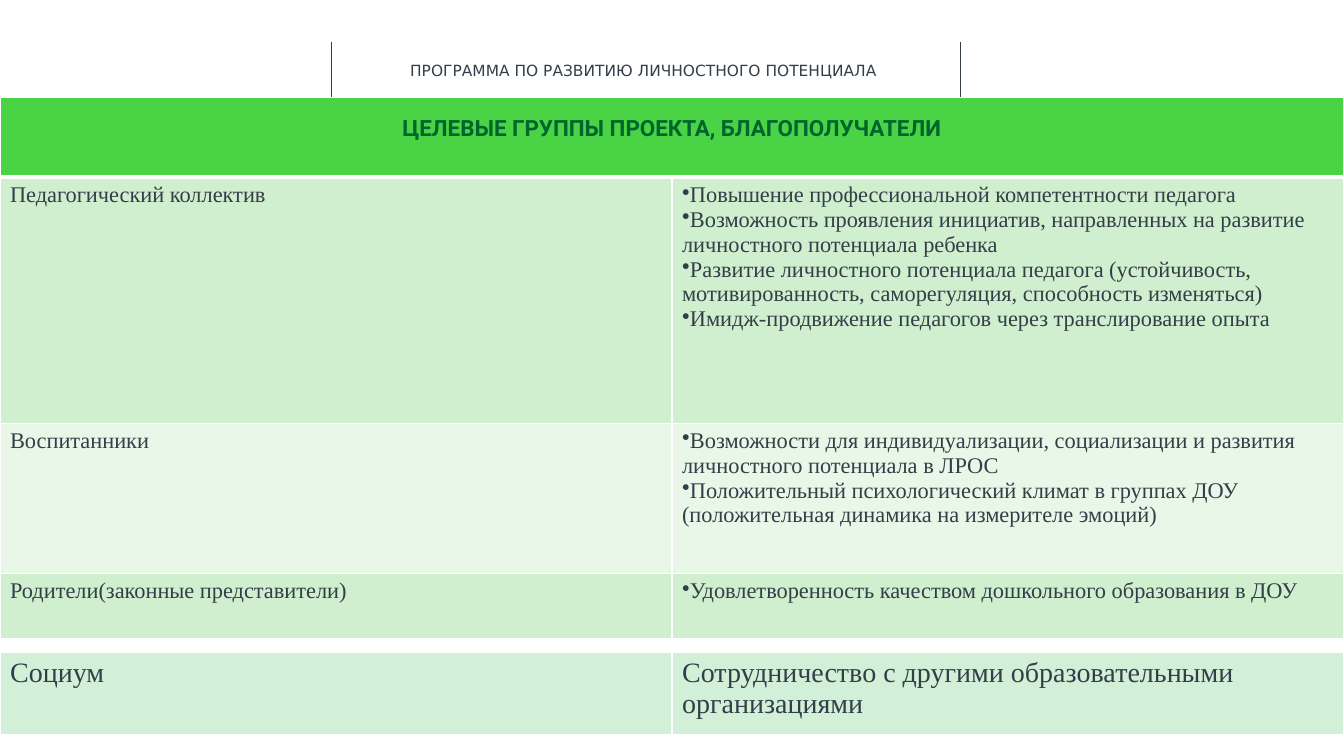
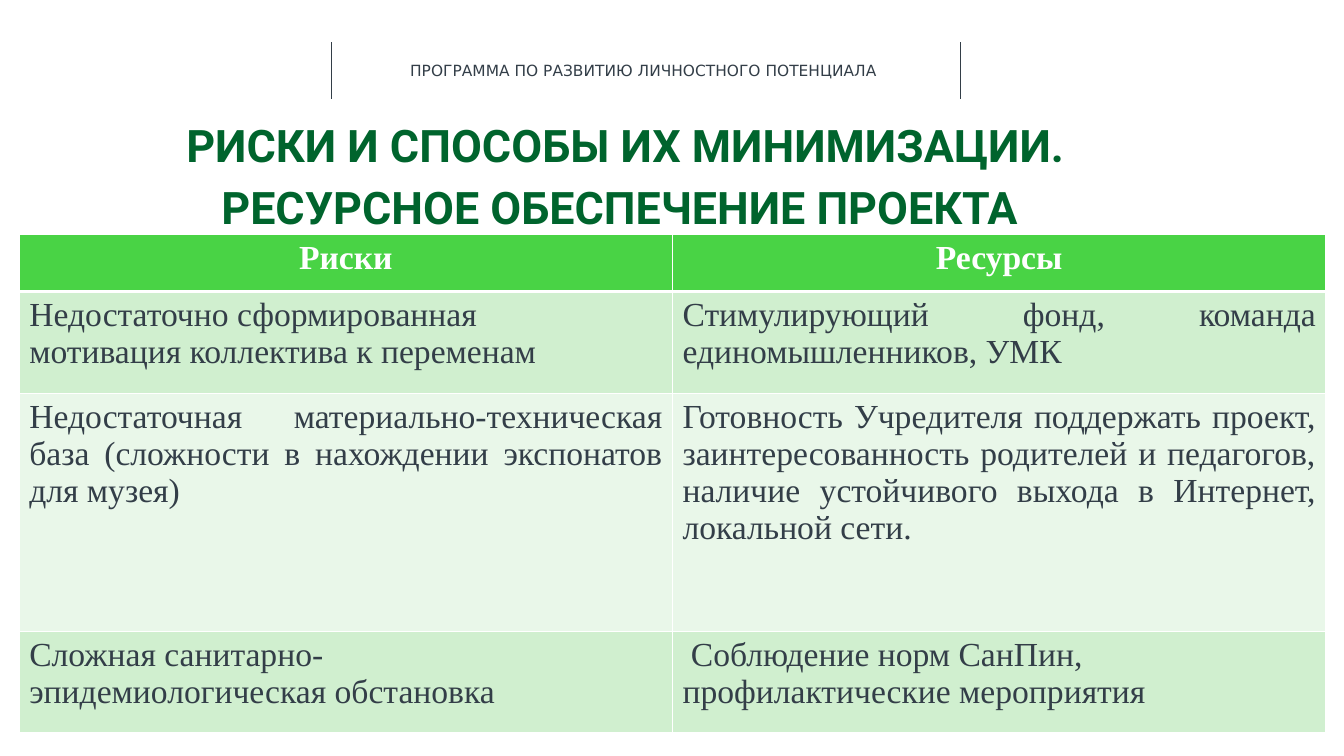
import pptx
import pptx.dml.color
import pptx.enum.shapes
import pptx.enum.text
import pptx.oxml
import pptx.oxml.ns
import pptx.util
from lxml import etree

W, H = pptx.util.Inches(13.33), pptx.util.Inches(7.5)
COLORS = {
    "ink": "333E48", "title": "00642D", "white": "FFFFFF", "head": "49D345",
    "band": "D0EFCF", "light": "E9F7E9", "mint": "D1F0D7",
}
SERIF, TITLE_FONT, LABEL_FONT = "Times New Roman", "Roboto", "DejaVu Sans"
ALIGN = pptx.enum.text.PP_ALIGN
BULLET = "•"

GROUPS = [
    (["Педагогический коллектив"],
     ["•Повышение профессиональной компетентности педагога",
      "•Возможность проявления инициатив, направленных на развитие личностного потенциала ребенка",
      "•Развитие личностного потенциала педагога (устойчивость, мотивированность, "
      "саморегуляция, способность изменяться)",
      "•Имидж-продвижение педагогов через транслирование опыта"]),
    (["Воспитанники"],
     ["•Возможности для индивидуализации, социализации и развития личностного потенциала в ЛРОС",
      "•Положительный психологический климат в группах ДОУ",
      "(положительная динамика на измерителе эмоций)"]),
    (["Родители(законные представители)"],
     ["•Удовлетворенность качеством дошкольного образования в ДОУ"]),
]
SOCIETY = (["Социум"], ["Сотрудничество с другими образовательными организациями"])
RISKS = [
    (["Недостаточно сформированная", "мотивация коллектива к переменам"],
     ["Стимулирующий фонд, команда единомышленников, УМК"]),
    (["Недостаточная материально-техническая база (сложности в нахождении экспонатов для музея)"],
     ["Готовность Учредителя поддержать проект, заинтересованность родителей и педагогов, "
      "наличие устойчивого выхода в Интернет, локальной сети."]),
    (["Сложная санитарно-", "эпидемиологическая обстановка"],
     [" Соблюдение норм СанПин,", "профилактические мероприятия"]),
]


def px(percent):
    """Share of the slide width."""
    return int(W * percent / 100)


def py(percent):
    """Share of the slide height."""
    return int(H * percent / 100)


def rgb(name):
    return pptx.dml.color.RGBColor.from_string(COLORS[name])


def add_bullet(p):
    pPr = p._p.get_or_add_pPr()
    pPr.set("marL", "0")
    pPr.set("indent", "0")
    etree.SubElement(pPr, pptx.oxml.ns.qn("a:buChar")).set("char", BULLET)


def write(tf, lines, size, font, color, bold=False, align=ALIGN.LEFT, gap=0, spacing=None):
    """Fill a text frame; a line that starts with the bullet sign becomes a bullet."""
    for i, line in enumerate(lines):
        p = tf.add_paragraph() if i else tf.paragraphs[0]
        p.text = line.removeprefix(BULLET)
        p.alignment = align
        if spacing:
            p.line_spacing = spacing
        if i and gap:
            p.space_before = pptx.util.Pt(gap)
        if line.startswith(BULLET):
            add_bullet(p)
        for r in p.runs:
            r.font.size, r.font.name, r.font.bold = pptx.util.Pt(size), font, bold
            r.font.color.rgb = rgb(color)


def add_text(s, left, top, width, height, lines, inset=True, **style):
    tf = s.shapes.add_textbox(px(left), py(top), px(width), py(height)).text_frame
    tf.word_wrap = True
    if not inset:
        tf.margin_left = tf.margin_right = tf.margin_top = tf.margin_bottom = 0
    write(tf, lines, **style)


def add_rule(s, x):
    ln = s.shapes.add_connector(pptx.enum.shapes.MSO_CONNECTOR.STRAIGHT,
                                px(x), py(5.6), px(x), py(13.07))
    ln.line.color.rgb = rgb("ink")
    ln.line.width = pptx.util.Pt(0.5)
    etree.SubElement(ln._element.spPr, pptx.oxml.ns.qn("a:effectLst"))


def add_running_head(s):
    for x in (24.68, 71.42):
        add_rule(s, x)
    add_text(s, 29.78, 7.47, 36.53, 3.87, ["ПРОГРАММА ПО РАЗВИТИЮ ЛИЧНОСТНОГО ПОТЕНЦИАЛА"],
             size=11, font=LABEL_FONT, color="ink")


def set_borders(cell, bottom):
    tcPr = cell._tc.get_or_add_tcPr()
    for i, (side, pt) in enumerate([("L", 1), ("R", 1), ("T", 1), ("B", bottom)]):
        tcPr.insert(i, pptx.oxml.parse_xml(
            f'<a:ln{side} {pptx.oxml.ns.nsdecls("a")} w="{pptx.util.Pt(pt)}"><a:solidFill>'
            f'<a:srgbClr val="{COLORS["white"]}"/></a:solidFill></a:ln{side}>'))


def add_table(s, left, top, width, heights, fills):
    """Add an empty table of two equal columns, one height and fill per row."""
    tbl = s.shapes.add_table(len(heights), 2, px(left), py(top),
                             px(width), py(sum(heights))).table
    tbl.first_row = tbl.horz_banding = False
    for col in tbl.columns:
        col.width = px(width / 2)
    for i, (row, height, fill) in enumerate(zip(tbl.rows, heights, fills)):
        row.height = py(height)
        for cell in row.cells:
            set_borders(cell, bottom=1 if i else 3)
            cell.fill.solid()
            cell.fill.fore_color.rgb = rgb(fill)
    return tbl


def fill_rows(tbl, first, rows, **style):
    for i, row in enumerate(rows, first):
        for j, lines in enumerate(row):
            write(tbl.cell(i, j).text_frame, lines, font=SERIF, **style)


def new_slide(prs):
    s = prs.slides.add_slide(prs.slide_layouts[6])
    add_running_head(s)
    return s


def add_groups_slide(prs):
    s = new_slide(prs)
    tbl = add_table(s, 0, 12.93, 100, [10.53, 32.53, 19.87, 8.67],
                    ["head", "band", "light", "band"])
    tbl.cell(0, 0).merge(tbl.cell(0, 1))
    write(tbl.cell(0, 0).text_frame, ["ЦЕЛЕВЫЕ ГРУППЫ ПРОЕКТА, БЛАГОПОЛУЧАТЕЛИ"], size=16,
          font=TITLE_FONT, color="title", bold=True, align=ALIGN.CENTER, spacing=1.5)
    fill_rows(tbl, 1, GROUPS, size=16, color="ink")
    society = add_table(s, 0, 86.27, 100, [11.07], ["mint"])
    fill_rows(society, 0, [SOCIETY], size=20, color="ink")


def add_risks_slide(prs):
    s = new_slide(prs)
    add_text(s, 0, 15.6, 93.1, 15.47,
             ["РИСКИ И СПОСОБЫ ИХ МИНИМИЗАЦИИ.", "РЕСУРСНОЕ ОБЕСПЕЧЕНИЕ ПРОЕКТА "],
             inset=False, size=32, font=TITLE_FONT, color="title", bold=True,
             align=ALIGN.CENTER, gap=6)
    tbl = add_table(s, 1.43, 31.07, 97.22, [7.47, 13.47, 31.47, 13.47],
                    ["head", "band", "light", "band"])
    fill_rows(tbl, 0, [(["Риски"], ["Ресурсы"])], size=24, color="white", bold=True,
              align=ALIGN.CENTER)
    fill_rows(tbl, 1, RISKS, size=24, color="ink", align=ALIGN.JUSTIFY)


def main():
    prs = pptx.Presentation()
    prs.slide_width, prs.slide_height = W, H
    add_groups_slide(prs)
    add_risks_slide(prs)
    prs.save("out.pptx")


if __name__ == "__main__":
    main()
